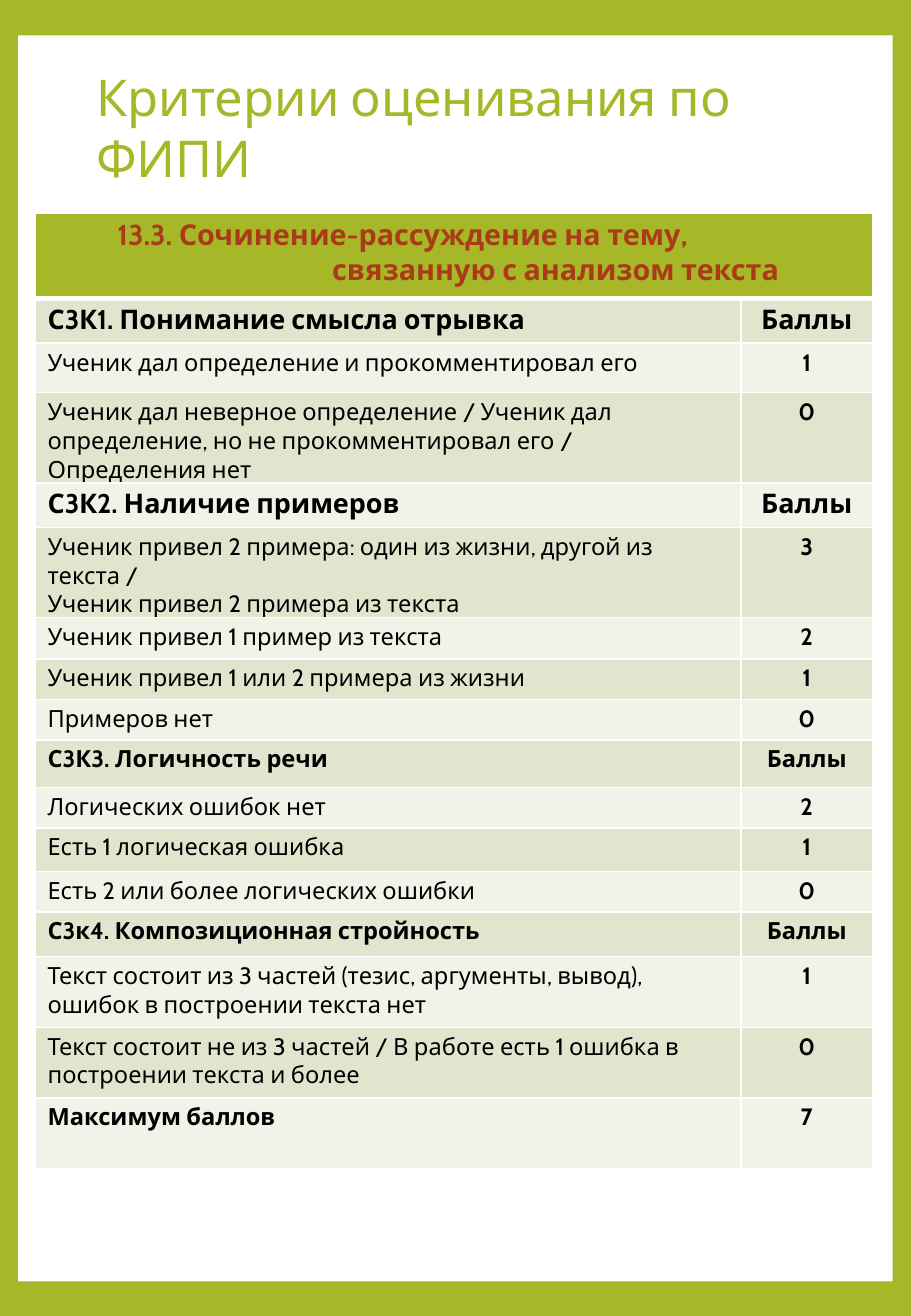
from lxml import etree
from pptx import Presentation
from pptx.dml.color import RGBColor
from pptx.enum import shapes, text
from pptx.oxml import ns
from pptx.util import Pt

EMU_PER_PX = 7620
SLIDE = (900, 1300)
FRAME = (0, 0, *SLIDE)
PAGE = (18, 35, 864, 1231)
TITLE_BOX = (95, 64, 697, 62)
TABLE_AT = (35, 211)
COLS = (697, 130)

FONT = "Cabin"
GREEN, RUST, BLACK, WHITE = "A6B727", "AB3B18", "000000", "FFFFFF"
BANDS = ("E0E6CD", "F0F3E8")

TITLE = "Критерии оценивания по ФИПИ"
HEADER = "13.3. Сочинение-рассуждение на тему, связанную с анализом текста"
HEADER_HEIGHT = 84
# label, points, row height, font size, bold label
ROWS = [
    ("С3К1. Понимание смысла отрывка", "Баллы", 44, 16, True),
    ("Ученик дал определение и прокомментировал его", "1", 49, 14, False),
    ("Ученик дал неверное определение / Ученик дал определение, "
     "но не прокомментировал его / Определения нет", "0", 70, 14, False),
    ("С3К2. Наличие примеров", "Баллы", 44, 16, True),
    ("Ученик привел 2 примера: один из жизни, другой из текста /\n"
     "Ученик привел 2 примера из текста", "3", 68, 14, False),
    ("Ученик привел 1 пример из текста", "2", 41, 14, False),
    ("Ученик привел 1 или 2 примера из жизни", "1", 40, 14, False),
    ("Примеров нет", "0", 40, 14, False),
    ("С3К3. Логичность речи", "Баллы", 47, 14, True),
    ("Логических ошибок нет", "2", 40, 14, False),
    ("Есть 1 логическая ошибка", "1", 43, 14, False),
    ("Есть 2 или более логических ошибки", "0", 40, 14, False),
    ("С3к4. Композиционная стройность", "Баллы", 44, 14, True),
    ("Текст состоит из 3 частей (тезис, аргументы, вывод), "
     "ошибок в построении текста нет", "1", 70, 14, False),
    ("Текст состоит не из 3 частей / В работе есть 1 ошибка "
     "в построении текста и более", "0", 70, 14, False),
    ("Максимум баллов", "7", 70, 14, True),
]


def px(*lengths):
    return [n * EMU_PER_PX for n in lengths]


def rgb(color):
    return RGBColor.from_string(color)


def add_panel(slide, box, color):
    sp = slide.shapes.add_shape(shapes.MSO_SHAPE.RECTANGLE, *px(*box))
    sp.shadow.inherit = False
    sp.fill.solid()
    sp.fill.fore_color.rgb = rgb(color)
    sp.line.fill.background()


def write(tf, content, size, color, bold=False, before=0, align=None, indent=(0, 0)):
    """Fill a text frame, one paragraph per line; indent is (left, first line)."""
    tf.word_wrap = True
    for i, line in enumerate(content.split("\n")):
        p = tf.paragraphs[0] if i == 0 else tf.add_paragraph()
        p.alignment = align or text.PP_ALIGN.LEFT
        p.space_before = Pt(before if i == 0 else 0)
        left, first = px(*indent)
        pPr = p._p.get_or_add_pPr()
        pPr.set("marL", str(left))
        pPr.set("indent", str(first))
        r = p.add_run()
        r.text = line
        r.font.name, r.font.size, r.font.bold = FONT, Pt(size), bold
        r.font.color.rgb = rgb(color)


def style_cell(cell, color, margins, top=1, bottom=1):
    """Set margins (left, top, right, bottom), white borders in points, and fill."""
    (cell.margin_left, cell.margin_top,
     cell.margin_right, cell.margin_bottom) = px(*margins)
    tcPr = cell._tc.get_or_add_tcPr()
    for side, width in (("L", 1), ("R", 1), ("T", top), ("B", bottom)):
        ln = etree.SubElement(tcPr, ns.qn("a:ln" + side), w=str(Pt(width)))
        fill = etree.SubElement(ln, ns.qn("a:solidFill"))
        etree.SubElement(fill, ns.qn("a:srgbClr"), val=WHITE)
    cell.fill.solid()
    cell.fill.fore_color.rgb = rgb(color)


def add_title(slide):
    tf = slide.shapes.add_textbox(*px(*TITLE_BOX)).text_frame
    tf.margin_left = tf.margin_right = tf.margin_bottom = 0
    tf.margin_top = px(1)[0]
    tf.auto_size = text.MSO_AUTO_SIZE.SHAPE_TO_FIT_TEXT
    write(tf, TITLE, 30, GREEN, before=1)


def add_criteria(slide):
    heights = [HEADER_HEIGHT] + [row[2] for row in ROWS]
    box = px(*TABLE_AT, sum(COLS), sum(heights))
    table = slide.shapes.add_table(len(heights), len(COLS), *box).table
    table.first_row = table.horz_banding = False
    for col, width in zip(table.columns, px(*COLS)):
        col.width = width
    for row, height in zip(table.rows, px(*heights)):
        row.height = height

    header = table.cell(0, 0)
    header.merge(table.cell(0, 1))
    for cell in table.rows[0].cells:
        style_cell(cell, GREEN, (0, 4, 60, 0), bottom=3)
    write(header.text_frame, HEADER, 17, RUST, True, 2.4, indent=(293, -212))

    for i, (label, points, _, size, bold) in enumerate(ROWS):
        label_cell, points_cell = table.rows[i + 1].cells
        top = 3 if i == 0 else 1
        style_cell(label_cell, BANDS[i % 2], (0, 5, 24, 0), top)
        style_cell(points_cell, BANDS[i % 2], (0, 5, 0, 0), top)
        write(label_cell.text_frame, label, size, BLACK, bold, 2.7, indent=(12, 0))
        write(points_cell.text_frame, points, size, BLACK, True, 2.7,
              text.PP_ALIGN.CENTER)


def main():
    prs = Presentation()
    prs.slide_width, prs.slide_height = px(*SLIDE)
    slide = prs.slides.add_slide(prs.slide_layouts[6])
    add_panel(slide, FRAME, GREEN)
    add_panel(slide, PAGE, WHITE)
    add_title(slide)
    add_criteria(slide)
    prs.save("out.pptx")


if __name__ == "__main__":
    main()
